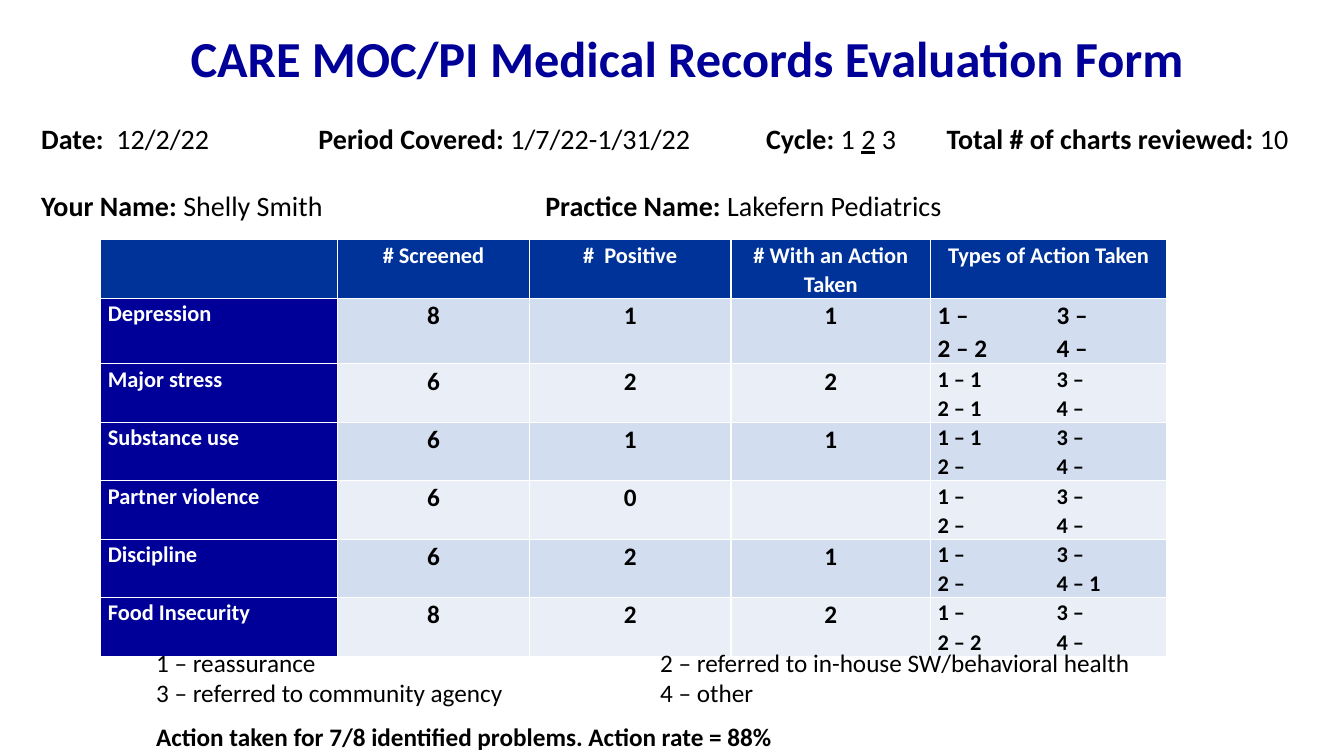
from lxml.etree import SubElement as Sub
from pptx import Presentation
from pptx.dml.color import RGBColor
from pptx.enum.text import MSO_ANCHOR as Anchor, PP_ALIGN as Align
from pptx.oxml.ns import qn
from pptx.util import Inches, Pt

NAVY, BLUE, WHITE, BLACK = "000099", "003399", "FFFFFF", "000000"
BANDS = ["D2DEEF", "EAEFF7"]


def write(para, parts, size, color=BLACK, tabs=(), **layout):
    """Add (text, font values) runs to a paragraph, with tab stops in inches."""
    for key, val in layout.items():
        setattr(para, key, val)
    if tabs:
        stops = Sub(para._p.get_or_add_pPr(), qn("a:tabLst"))
        for tab in tabs:
            Sub(stops, qn("a:tab"), pos=str(Inches(tab)), algn="l")
    for text, look in parts:
        run = para.add_run()
        run.text = text
        values = {"name": "Calibri", "size": Pt(size), "bold": False} | look
        for key, val in values.items():
            setattr(run.font, key, val)
        run.font.color.rgb = RGBColor.from_string(color)


def add_box(left, top, width, height, **frame):
    """Add a wrapping text box and return its text frame."""
    box = slide.shapes.add_textbox(*map(Inches, (left, top, width, height)))
    for key, val in ({"word_wrap": True} | frame).items():
        setattr(box.text_frame, key, val)
    return box.text_frame


deck = Presentation()
deck.slide_width, deck.slide_height = Inches(13.33), Inches(7.5)
slide = deck.slides.add_slide(deck.slide_layouts[6])
bold, plain = {"bold": True}, {}

# Title
title = add_box(0.79, 0.23, 11.5, 1.45, margin_left=Inches(1.1),
                margin_top=Inches(0.11))
write(title.paragraphs[0], [("CARE MOC/PI Medical Records Evaluation Form", bold)],
      36, NAVY, line_spacing=0.9)

# Results table
heads = ["", "# Screened", "#  Positive", "# With an Action Taken",
         "Types of Action Taken"]
# Topic, screened, positive, with action, then the count for actions 1 to 4
topics = [
    ("Depression", "8", "1", "1", ["", "2", "", ""]),
    ("Major stress", "6", "2", "2", ["1", "1", "", ""]),
    ("Substance use", "6", "1", "1", ["1", "", "", ""]),
    ("Partner violence", "6", "0", "", ["", "", "", ""]),
    ("Discipline", "6", "2", "1", ["", "", "", "1"]),
    ("Food Insecurity", "8", "2", "2", ["", "2", "", ""]),
]
widths = [2.35, 1.9, 2, 1.98, 2.34]
heights = [0.58, 0.65] + [0.58] * 5
grid = slide.shapes.add_table(
    len(heights), len(widths), Inches(1), Inches(2.38),
    Inches(sum(widths)), Inches(sum(heights))).table
for col, width in zip(grid.columns, widths):
    col.width = Inches(width)
for row, height in zip(grid.rows, heights):
    row.height = Inches(height)

for r, row in enumerate([heads] + topics):
    for c, value in enumerate(row):
        cell = grid.cell(r, c)
        cell.margin_left = cell.margin_right = Inches(0.07)
        cell.margin_top = cell.margin_bottom = 0
        fill = BLUE if r == 0 else NAVY if c == 0 else BANDS[(r - 1) % 2]
        cell.fill.solid()
        cell.fill.fore_color.rgb = RGBColor.from_string(fill)
        if r and c == 4:
            acts = [f"{n} – {count}".strip() for n, count in enumerate(value, 1)]
            lines = [f"{acts[0]}\t{acts[2]}", f"{acts[1]}\t{acts[3]}"]
        else:
            lines = [value]
        size = 18 if r and 0 < c < 4 or r == 1 and c == 4 else 16
        color = WHITE if r == 0 or c == 0 else BLACK
        align = Align.CENTER if r == 0 or 0 < c < 4 else Align.LEFT
        tabs = (1.18,) if len(lines) > 1 else ()
        for n, line in enumerate(lines):
            text = cell.text_frame
            para = text.add_paragraph() if n else text.paragraphs[0]
            write(para, [(line, bold)] if line else [], size, color, tabs,
                  alignment=align, line_spacing=1.07)

# Form details
form = add_box(0.31, 1.15, 12.71, 1.11, vertical_anchor=Anchor.MIDDLE)
write(form.paragraphs[0], [
    ("Date: ", bold), (" 12/2/22", plain),
    ("\tPeriod Covered:", bold), (" 1/7/22-1/31/22", plain),
    ("\tCycle: ", bold), ("1 ", plain), ("2", {"underline": True}), (" 3", plain),
    ("\tTotal # of charts reviewed: ", bold), ("10", plain),
], 20, tabs=(2.75, 7.19, 8.98))
write(form.add_paragraph(), [
    ("Your Name: ", bold), ("Shelly Smith", plain),
    ("\tPractice Name: ", bold), ("Lakefern Pediatrics", plain),
], 20, tabs=(5,), space_before=Pt(24))

# Action key and summary
key = add_box(1.45, 6.37, 11.64, 1.13)
write(key.paragraphs[0], [
    ("1 – reassurance\t2 – referred to in-house SW/behavioral health", plain),
], 18, tabs=(5,))
write(key.add_paragraph(), [
    ("3 – referred to community agency\t4 – other", plain),
], 18, tabs=(5,))
write(key.add_paragraph(), [
    ("Action taken for 7/8 identified problems. Action rate = 88%", bold),
], 18, space_before=Pt(10))

deck.save("out.pptx")
